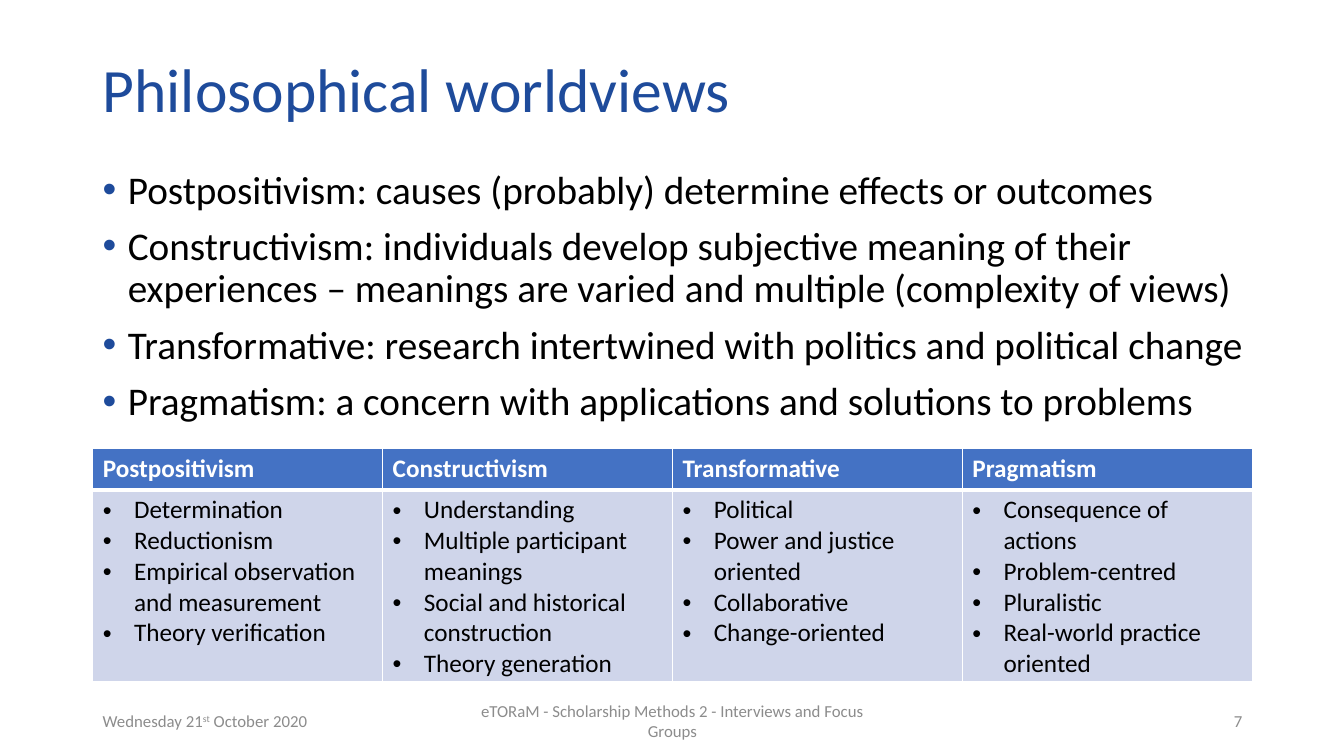
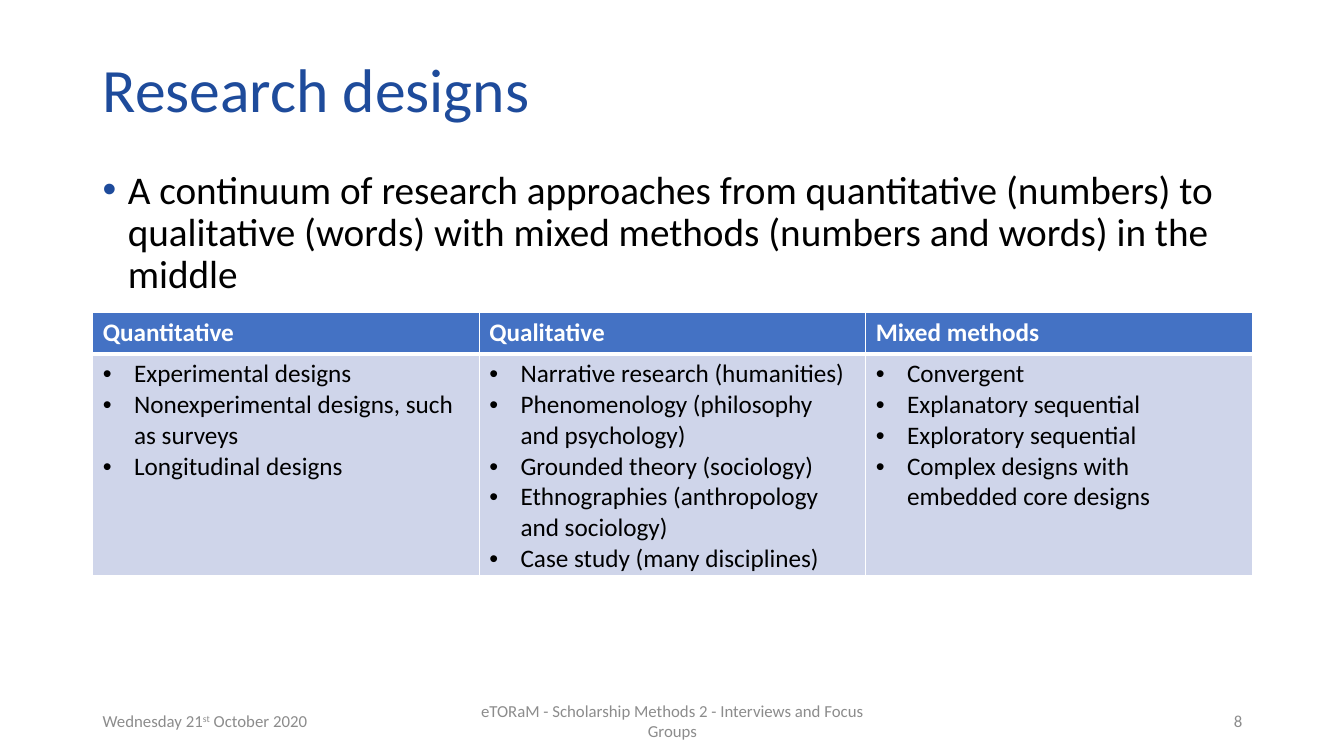
from lxml import etree
from pptx import Presentation
from pptx.dml.color import RGBColor
from pptx.enum.text import MSO_ANCHOR, PP_ALIGN
from pptx.oxml.ns import qn
from pptx.util import Pt

# Shared style: 100 px to the inch
EMU_PER_PX = 9144
FONT = "Calibri"
BLUE, BLACK, GREY, WHITE = "1E4B9B", "000000", "8C8C8C", "FFFFFF"
HEADER_FILL, BODY_FILL = "4472C4", "CFD5EA"
LEFT, CONTENT_WIDTH = 92, 1150
FOOTER_TOP, FOOTER_HEIGHT = 695, 40
HEADER_HEIGHT = 41

DATE_PARTS = ["Wednesday 21", "st", " October 2020"]
FOOTER = "eTORaM - Scholarship Methods 2 - Interviews and Focus Groups"

SLIDES = [
    {
        "number": 7,
        "title": "Philosophical worldviews",
        "body_size": (1183, 281),
        "points": [
            "Postpositivism: causes (probably) determine effects or outcomes",
            "Constructivism: individuals develop subjective meaning of their "
            "experiences – meanings are varied and multiple (complexity of views)",
            "Transformative: research intertwined with politics and political change",
            "Pragmatism: a concern with applications and solutions to problems",
        ],
        "table_top": 445,
        "row_height": 190,
        "columns": {
            "Postpositivism": [
                "Determination", "Reductionism",
                "Empirical observation and measurement", "Theory verification"],
            "Constructivism": [
                "Understanding", "Multiple participant meanings",
                "Social and historical construction", "Theory generation"],
            "Transformative": [
                "Political", "Power and justice oriented",
                "Collaborative", "Change-oriented"],
            "Pragmatism": [
                "Consequence of actions", "Problem-centred",
                "Pluralistic", "Real-world practice oriented"],
        },
    },
    {
        "number": 8,
        "title": "Research designs",
        "body_size": (CONTENT_WIDTH, 512),
        "points": [
            "A continuum of research approaches from quantitative (numbers) to "
            "qualitative (words) with mixed methods (numbers and words) in the middle",
        ],
        "table_top": 310,
        "row_height": 220,
        "columns": {
            "Quantitative": [
                "Experimental designs", "Nonexperimental designs, such as surveys",
                "Longitudinal designs"],
            "Qualitative": [
                "Narrative research (humanities)",
                "Phenomenology (philosophy and psychology)",
                "Grounded theory (sociology)",
                "Ethnographies (anthropology and sociology)",
                "Case study (many disciplines)"],
            "Mixed methods": [
                "Convergent", "Explanatory sequential", "Exploratory sequential",
                "Complex designs with embedded core designs"],
        },
    },
]


def px(length):
    return length * EMU_PER_PX


def color(value):
    return RGBColor.from_string(value)


def format_runs(paragraph, size, text_color, bold=False):
    for run in paragraph.runs:
        run.font.name = FONT
        run.font.size = Pt(size)
        run.font.bold = bold
        run.font.color.rgb = color(text_color)


def add_bullet(paragraph, indent, bullet_color):
    properties = paragraph._p.get_or_add_pPr()
    properties.set("marL", str(px(indent)))
    properties.set("indent", str(-px(indent)))
    bullet_fill = etree.SubElement(properties, qn("a:buClr"))
    etree.SubElement(bullet_fill, qn("a:srgbClr"), val=bullet_color)
    etree.SubElement(properties, qn("a:buFont"), typeface="Arial")
    etree.SubElement(properties, qn("a:buChar"), char="•")


def fill_bullets(text_frame, items, size, indent, bullet_color):
    text_frame.text = "\n".join(items)
    for paragraph in text_frame.paragraphs:
        add_bullet(paragraph, indent, bullet_color)
        format_runs(paragraph, size, BLACK)


def add_text_box(slide, left, top, width, height, anchor=MSO_ANCHOR.MIDDLE):
    box = slide.shapes.add_textbox(px(left), px(top), px(width), px(height))
    text_frame = box.text_frame
    text_frame.word_wrap = True
    text_frame.vertical_anchor = anchor
    return text_frame


def add_title(slide, title):
    text_frame = add_text_box(slide, LEFT, 40, CONTENT_WIDTH, 104)
    text_frame.text = title
    paragraph = text_frame.paragraphs[0]
    paragraph.line_spacing = 0.9
    format_runs(paragraph, 44, BLUE)


def add_body(slide, points, size):
    text_frame = add_text_box(slide, LEFT, 164, *size, anchor=MSO_ANCHOR.TOP)
    fill_bullets(text_frame, points, 28, 25, BLUE)
    for index, paragraph in enumerate(text_frame.paragraphs):
        paragraph.line_spacing = 0.9
        if index:
            paragraph.space_before = Pt(10)


def add_footer_part(slide, left, width, parts, alignment):
    text_frame = add_text_box(slide, left, FOOTER_TOP, width, FOOTER_HEIGHT)
    paragraph = text_frame.paragraphs[0]
    paragraph.alignment = alignment
    for part in parts:
        paragraph.add_run().text = part
    format_runs(paragraph, 12, GREY)
    return paragraph


def add_footer(slide, number):
    date = add_footer_part(slide, LEFT, 300, DATE_PARTS, PP_ALIGN.LEFT)
    date.runs[1]._r.get_or_add_rPr().set("baseline", "30000")
    add_footer_part(slide, 442, 450, [FOOTER], PP_ALIGN.CENTER)
    add_footer_part(slide, 942, 300, [str(number)], PP_ALIGN.RIGHT)


def style_cell(cell, fill_color, bottom_width):
    # Borders come before the fill in the cell properties
    properties = cell._tc.get_or_add_tcPr()
    for side, width in (("L", 1), ("R", 1), ("T", 1), ("B", bottom_width)):
        line = etree.SubElement(properties, qn("a:ln" + side), w=str(Pt(width)))
        line_fill = etree.SubElement(line, qn("a:solidFill"))
        etree.SubElement(line_fill, qn("a:srgbClr"), val=WHITE)
    cell.fill.solid()
    cell.fill.fore_color.rgb = color(fill_color)


def add_comparison_table(slide, top, row_height, columns):
    frame = slide.shapes.add_table(
        2, len(columns), px(LEFT), px(top),
        px(CONTENT_WIDTH), px(HEADER_HEIGHT + row_height))
    table = frame.table
    table.horz_banding = False
    table.rows[0].height = px(HEADER_HEIGHT)
    table.rows[1].height = px(row_height)
    for index, (heading, items) in enumerate(columns.items()):
        header, body = table.cell(0, index), table.cell(1, index)
        style_cell(header, HEADER_FILL, 3)
        header.text_frame.text = heading
        format_runs(header.text_frame.paragraphs[0], 18, WHITE, bold=True)
        style_cell(body, BODY_FILL, 1)
        fill_bullets(body.text_frame, items, 18, 31, BLACK)


def main():
    presentation = Presentation()
    presentation.slide_width = px(1333)
    presentation.slide_height = px(750)
    for content in SLIDES:
        slide = presentation.slides.add_slide(presentation.slide_layouts[6])
        add_title(slide, content["title"])
        add_body(slide, content["points"], content["body_size"])
        add_footer(slide, content["number"])
        add_comparison_table(slide, content["table_top"],
                             content["row_height"], content["columns"])
    presentation.save("out.pptx")


if __name__ == "__main__":
    main()
